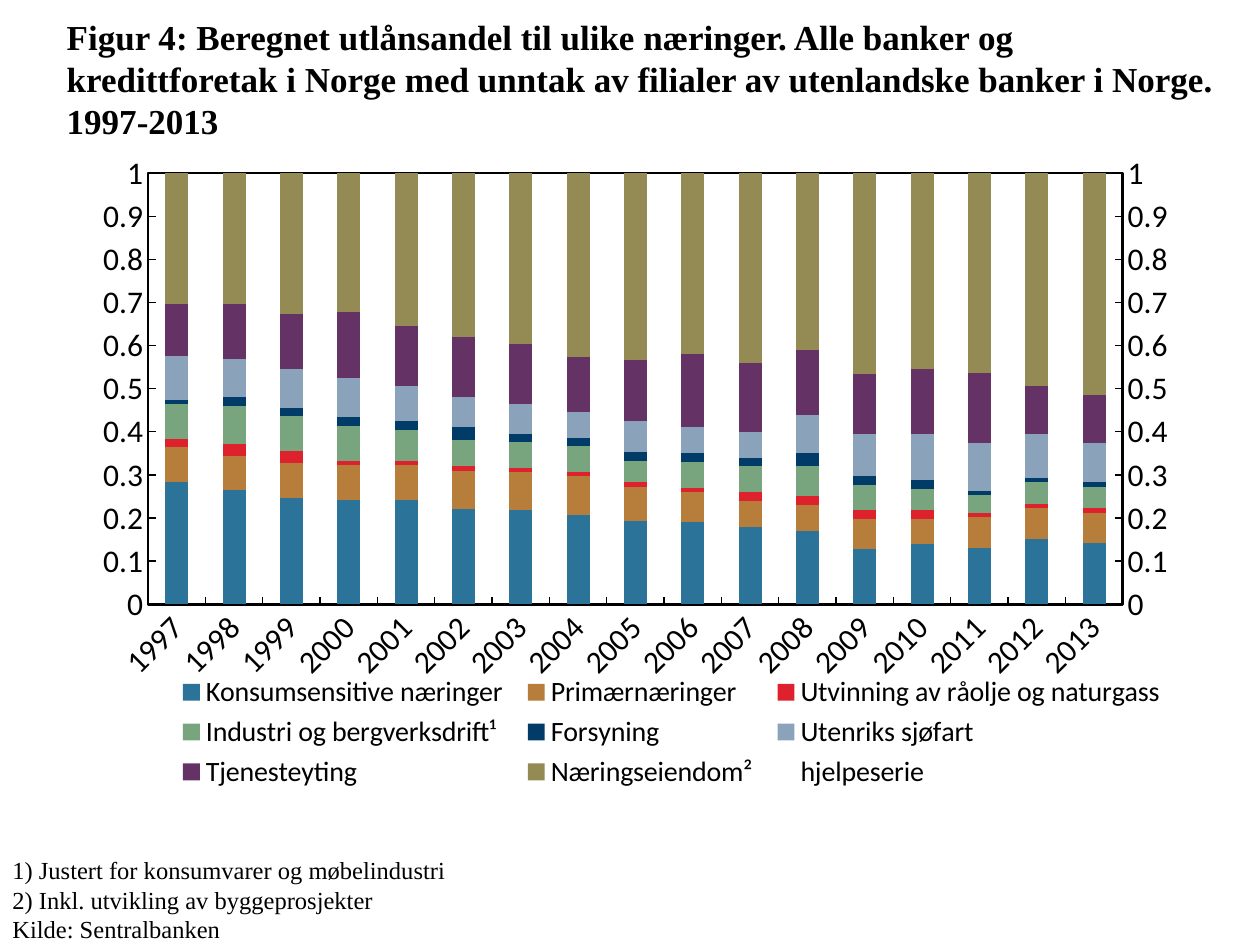
import copy
import lxml.etree
import pptx
import pptx.chart.data
import pptx.dml.color
import pptx.enum.chart
import pptx.enum.text
import pptx.oxml
import pptx.oxml.ns
import pptx.util

Cm, Pt, qn = pptx.util.Cm, pptx.util.Pt, pptx.oxml.ns.qn
colors = {
    "black": "000000",
    "Konsumsensitive næringer": "2C7399",
    "Primærnæringer": "B67D3B",
    "Utvinning av råolje og naturgass": "DD222D",
    "Industri og bergverksdrift¹": "78A57D",
    "Forsyning": "003C67",
    "Utenriks sjøfart": "8AA2BA",
    "Tjenesteyting": "643264",
    "Næringseiendom²": "948A54",
}
shares = {
    "Konsumsensitive næringer": [28, 27, 25, 24, 24, 22, 22, 21, 19, 19, 18, 17, 13, 14, 13, 15, 14],
    "Primærnæringer": [8, 8, 8, 8, 8, 9, 9, 9, 8, 7, 6, 6, 7, 6, 7, 7, 7],
    "Utvinning av råolje og naturgass": [2, 3, 3, 1, 1, 1, 1, 1, 1, 1, 2, 2, 2, 2, 1, 1, 1],
    "Industri og bergverksdrift¹": [8, 9, 8, 8, 7, 6, 6, 6, 5, 6, 6, 7, 6, 5, 4, 5, 5],
    "Forsyning": [1, 2, 2, 2, 2, 3, 2, 2, 2, 2, 2, 3, 2, 2, 1, 1, 1],
    "Utenriks sjøfart": [10, 9, 9, 9, 8, 7, 7, 6, 7, 6, 6, 9, 10, 11, 11, 10, 9],
    "Tjenesteyting": [12, 13, 13, 15, 14, 14, 14, 13, 14, 17, 16, 15, 14, 15, 16, 11, 11],
    "Næringseiendom²": [30, 31, 33, 32, 35, 38, 40, 43, 43, 42, 44, 41, 47, 46, 46, 49, 51],
    "hjelpeserie": [1] * 17,
}


def add_run(p, text, size, bold=False):
    r = p.add_run()
    r.text = text
    r.font.name = "Times New Roman"
    r.font.size = Pt(size)
    r.font.bold = bold
    r.font.color.rgb = pptx.dml.color.RGBColor.from_string(colors["black"])


def set_layout(parent, index, x, y, w, h, inner=False):
    for old in parent.findall(qn("c:layout")):
        parent.remove(old)
    layout = lxml.etree.Element(qn("c:layout"))
    manual = lxml.etree.SubElement(layout, qn("c:manualLayout"))
    values = [("layoutTarget", "inner")] if inner else []
    values += [("xMode", "edge"), ("yMode", "edge"), ("x", x), ("y", y), ("w", w), ("h", h)]
    for tag, value in values:
        lxml.etree.SubElement(manual, qn("c:" + tag)).set("val", str(value))
    parent.insert(index, layout)


prs = pptx.Presentation()
prs.slide_width, prs.slide_height = Cm(25.4), Cm(19.05)
s = prs.slides.add_slide(prs.slide_layouts[5])

title = s.shapes.title
title.left, title.top, title.width, title.height = Cm(1.09), Cm(0), Cm(23.8), Cm(3.18)
tf = title.text_frame
tf.word_wrap = True
tf.vertical_anchor = pptx.enum.text.MSO_ANCHOR.MIDDLE
p = tf.paragraphs[0]
p.alignment = pptx.enum.text.PP_ALIGN.LEFT
add_run(p, "Figur 4: Beregnet utlånsandel til ulike næringer. Alle banker og kredittforetak i Norge "
           "med unntak av filialer av utenlandske banker i Norge. 1997-2013", 20, True)

data = pptx.chart.data.CategoryChartData()
data.categories = [str(year) for year in range(1997, 2014)]
for name, values in shares.items():
    data.add_series(name, values)
chart = s.shapes.add_chart(pptx.enum.chart.XL_CHART_TYPE.COLUMN_STACKED_100,
                           Cm(0.71), Cm(2.72), Cm(24.2), Cm(14), data).chart
chart.has_title = False
chart.font.name = "Calibri"
chart.font.size = Pt(18)
chart.font.color.rgb = pptx.dml.color.RGBColor.from_string(colors["black"])
plot = chart.plots[0]
plot.gap_width, plot.overlap = 150, 100
plot.vary_by_categories = False
for series in plot.series:
    if series.name in colors:
        series.format.fill.solid()
        series.format.fill.fore_color.rgb = pptx.dml.color.RGBColor.from_string(colors[series.name])
    else:
        series.format.fill.background()

for axis in (chart.category_axis, chart.value_axis):
    axis.has_major_gridlines = False
    axis.major_tick_mark = pptx.enum.chart.XL_TICK_MARK.INSIDE
    axis.minor_tick_mark = pptx.enum.chart.XL_TICK_MARK.NONE
    axis.format.line.width = Pt(0.75)
    axis.format.line.color.rgb = pptx.dml.color.RGBColor.from_string(colors["black"])
    axis.tick_labels.font.size = Pt(18)
chart.category_axis._element.find(qn("c:txPr")).find(qn("a:bodyPr")).set("rot", "-2700000")
value_axis = chart.value_axis
value_axis.minimum_scale, value_axis.maximum_scale, value_axis.major_unit = 0, 1, 0.1
value_axis.tick_labels.number_format = "General"
value_axis.tick_labels.number_format_is_linked = False

chart.has_legend = True
legend = chart.legend
legend.position = pptx.enum.chart.XL_LEGEND_POSITION.BOTTOM
legend.include_in_layout = True
legend.font.size = Pt(16)
set_layout(legend._element, 1, 0.11, 0.77, 0.84, 0.18)

bars = plot._element
area = bars.getparent()
set_layout(area, 0, 0.094, 0.055, 0.812, 0.621, inner=True)
right_bars = copy.deepcopy(bars)
for ser in right_bars.findall(qn("c:ser"))[:-1]:
    right_bars.remove(ser)
bars.remove(bars.findall(qn("c:ser"))[-1])
bars.addnext(right_bars)
for ax_id, new_id in zip(right_bars.findall(qn("c:axId")), ("5001", "5002")):
    ax_id.set("val", new_id)
right_cat = copy.deepcopy(chart.category_axis._element)
right_val = copy.deepcopy(value_axis._element)
for axis, own, other in ((right_cat, "5001", "5002"), (right_val, "5002", "5001")):
    axis.find(qn("c:axId")).set("val", own)
    axis.find(qn("c:crossAx")).set("val", other)
right_cat.find(qn("c:delete")).set("val", "1")
right_val.find(qn("c:axPos")).set("val", "r")
right_val.find(qn("c:crosses")).set("val", "max")
value_axis._element.addnext(right_val)
right_val.addnext(right_cat)
right_cat.addnext(pptx.oxml.parse_xml(
    '<c:spPr xmlns:c="http://schemas.openxmlformats.org/drawingml/2006/chart" '
    'xmlns:a="http://schemas.openxmlformats.org/drawingml/2006/main"><a:noFill/>'
    f'<a:ln w="{Pt(1.5)}"><a:solidFill><a:srgbClr val="{colors["black"]}"/></a:solidFill></a:ln></c:spPr>'))

tf = s.shapes.add_textbox(Cm(0), Cm(17.12), Cm(23.55), Cm(2.06)).text_frame
tf.word_wrap = True
tf.auto_size = pptx.enum.text.MSO_AUTO_SIZE.SHAPE_TO_FIT_TEXT
notes = ["1) Justert for konsumvarer og møbelindustri",
         "2) Inkl. utvikling av byggeprosjekter",
         "Kilde: Sentralbanken"]
for i, note in enumerate(notes):
    p = tf.add_paragraph() if i else tf.paragraphs[0]
    add_run(p, note, 14)

prs.save("out.pptx")
